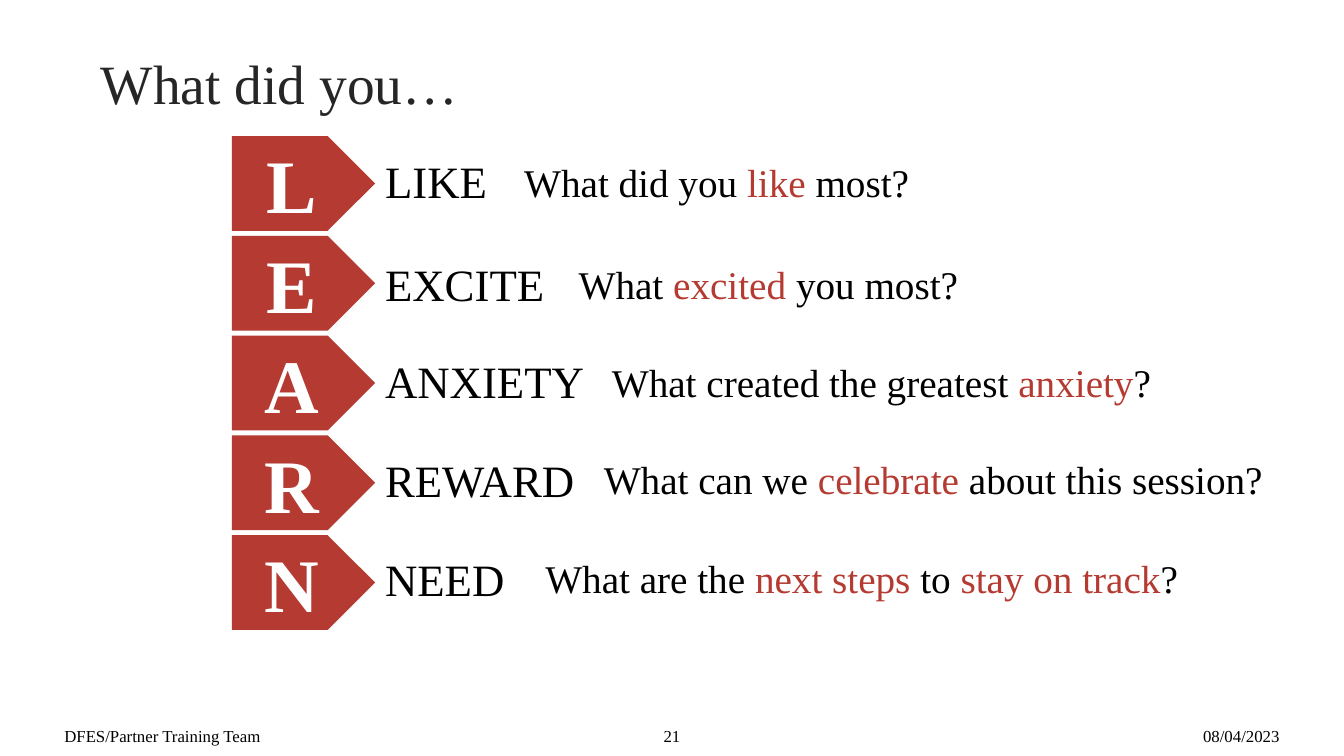
"""Build the LEARN reflection slide."""
from pptx import Presentation
from pptx.dml.color import RGBColor
from pptx.enum.shapes import MSO_SHAPE as Shape
from pptx.enum.text import MSO_ANCHOR as Anchor, MSO_AUTO_SIZE as Fit, PP_ALIGN as Align
from pptx.util import Inches, Pt

RED = RGBColor(0xB5, 0x3A, 0x31)
BLACK = RGBColor(0, 0, 0)
WHITE = RGBColor(255, 255, 255)
GREY = RGBColor(0x26, 0x26, 0x26)
FONT = "Times New Roman"


def write(shape, text, size, color=BLACK, bold=False, align=Align.LEFT,
          anchor=Anchor.MIDDLE, fit=Fit.NONE):
    """Fill a shape with text, with every second part between bars in red."""
    frame = shape.text_frame
    frame.word_wrap = True
    frame.auto_size = fit
    frame.vertical_anchor = anchor
    line = frame.paragraphs[0]
    line.alignment = align
    for i, part in enumerate(text.split("|")):
        run = line.add_run()
        run.text = part
        font = run.font
        font.name = FONT
        font.size = Pt(size)
        font.bold = bold
        font.color.rgb = RED if i % 2 else color


def place(x, y, w, h):
    return Inches(x), Inches(y), Inches(w), Inches(h)


deck = Presentation()
deck.slide_width = Inches(13.33)
deck.slide_height = Inches(7.5)
slide = deck.slides.add_slide(deck.slide_layouts[5])
shapes = slide.shapes

title = shapes.title
title.left, title.top, title.width, title.height = place(0.9, 0.44, 3.83, 0.76)
write(title, "What did you…", 39.6, color=GREY)

rows = [
    ("LIKE", 1.48, 1.42, "What did you |like| most?", 5.1, 1.52, 4.51),
    ("EXCITE", 2.5, 1.91, "What |excited| you most?", 5.64, 2.53, 4.51),
    ("ANXIETY", 3.46, 2.25, "What created the greatest |anxiety|?", 5.97, 3.51, 5.58),
    ("REWARD", 4.44, 2.25, "What can we |celebrate| about this session?", 5.89, 4.47, 6.9),
    ("NEED", 5.42, 2.25, "What are the |next steps |to |stay on track|?", 5.31, 5.45, 6.9),
]
for i, (word, top, wide, ask, ask_x, ask_y, ask_w) in enumerate(rows):
    arrow = shapes.add_shape(Shape.PENTAGON, *place(2.3, 1.35 + 0.99 * i, 1.42, 0.94))
    arrow.shadow.inherit = False
    arrow.fill.solid()
    arrow.fill.fore_color.rgb = RED
    arrow.line.fill.background()
    write(arrow, word[0], 54, color=WHITE, bold=True, align=Align.CENTER)

    label = shapes.add_textbox(*place(3.72, top, wide, 0.64))
    write(label, word, 32, anchor=Anchor.TOP, fit=Fit.SHAPE_TO_FIT_TEXT)
    query = shapes.add_textbox(*place(ask_x, ask_y, ask_w, 0.57))
    write(query, ask, 28, anchor=Anchor.TOP, fit=Fit.SHAPE_TO_FIT_TEXT)

notes = [
    ("DFES/Partner Training Team", 0.54, 2.87, Align.LEFT),
    ("21", 6.37, 0.59, Align.CENTER),
    ("08/04/2023", 11.04, 1.75, Align.RIGHT),
]
for text, x, w, align in notes:
    write(shapes.add_textbox(*place(x, 7.14, w, 0.31)), text, 12, align=align)

deck.save("out.pptx")
